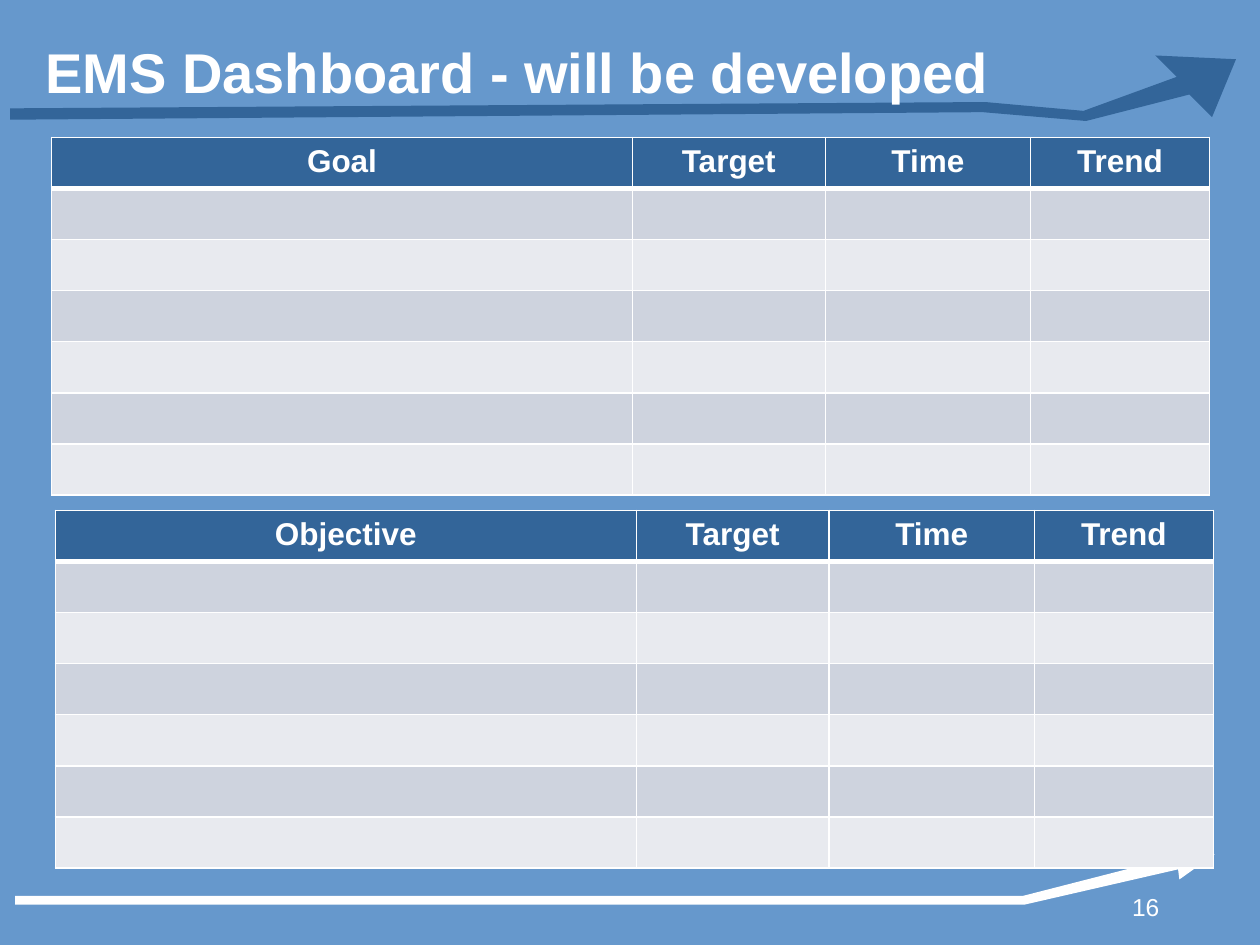
from dataclasses import dataclass

from lxml.etree import SubElement
from pptx import Presentation
from pptx.dml.color import RGBColor as Color
from pptx.enum.text import MSO_ANCHOR as Anchor, PP_ALIGN as Align
from pptx.oxml.ns import qn
from pptx.util import Inches, Pt


@dataclass(frozen=True)
class Theme:
    font: str = "Arial"
    background: str = "6698CC"
    dark: str = "336599"
    white: str = "FFFFFF"
    bands: tuple = ("CED3DE", "E8EAEF")
    title_size: int = 32
    header_size: int = 18
    number_size: int = 14
    thin: int = 1
    thick: int = 3


THEME = Theme()
COLUMN_WIDTHS = (4.61, 1.53, 1.63, 1.42)
MEASURES = ("Target", "Time", "Trend")
ROW_COUNT = 7

# Arrow outlines, in inches on the page
TOP_ARROW = [(0.08, 0.95), (7.8, 0.89), (8.62, 0.96), (9.44, 0.75), (9.62, 0.93), (9.81, 0.47),
             (9.17, 0.44), (9.34, 0.61), (8.6, 0.88), (7.82, 0.81), (0.08, 0.86)]
BOTTOM_ARROW = [(0.12, 7.11), (8.12, 7.11), (9.33, 6.8), (9.31, 6.73), (9.64, 6.78),
                (9.36, 6.98), (9.35, 6.9), (8.13, 7.18), (0.12, 7.18)]


def place(shape, box):
    shape.left, shape.top, shape.width, shape.height = map(Inches, box)


def write(frame, text, size, align, bold=False):
    para = frame.paragraphs[0]
    para.alignment = align
    span = para.add_run()
    span.text = text
    span.font.name = THEME.font
    span.font.size = Pt(size)
    span.font.bold = bold
    span.font.color.rgb = Color.from_string(THEME.white)


def add_arrow(page, points, color):
    start, *rest = [(Inches(x), Inches(y)) for x, y in points]
    builder = page.shapes.build_freeform(*start)
    builder.add_line_segments(rest, close=True)
    arrow = builder.convert_to_shape()
    arrow.shadow.inherit = False
    arrow.fill.solid()
    arrow.fill.fore_color.rgb = Color.from_string(color)
    arrow.line.fill.background()


def add_title(page, box, text):
    title = page.shapes.title
    place(title, box)
    # Bring the title in front of the arrows
    title.element.getparent().append(title.element)
    title.text_frame.word_wrap = True
    title.text_frame.vertical_anchor = Anchor.MIDDLE
    write(title.text_frame, text, THEME.title_size, Align.LEFT, bold=True)


def add_page_number(page, box, text):
    number = page.shapes.add_textbox(*map(Inches, box))
    number.text_frame.word_wrap = True
    write(number.text_frame, text, THEME.number_size, Align.RIGHT)


def set_borders(cell, top, bottom):
    """Draw white cell borders; they must come before the cell's fill."""
    properties = cell._tc.get_or_add_tcPr()
    widths = {"a:lnL": THEME.thin, "a:lnR": THEME.thin, "a:lnT": top, "a:lnB": bottom}
    for tag, width in widths.items():
        line = SubElement(properties, qn(tag), w=str(Pt(width)))
        fill = SubElement(line, qn("a:solidFill"))
        SubElement(fill, qn("a:srgbClr"), val=THEME.white)


def add_dashboard_table(page, box, subject):
    table = page.shapes.add_table(ROW_COUNT, len(COLUMN_WIDTHS), *map(Inches, box)).table
    for column, width in zip(table.columns, COLUMN_WIDTHS):
        column.width = Inches(width)
    for index, row in enumerate(table.rows):
        row.height = Inches(box[3] / ROW_COUNT)
        color = THEME.bands[(index - 1) % 2] if index else THEME.dark
        for cell in row.cells:
            set_borders(cell,
                        top=THEME.thick if index == 1 else THEME.thin,
                        bottom=THEME.thick if index == 0 else THEME.thin)
            cell.fill.solid()
            cell.fill.fore_color.rgb = Color.from_string(color)
    for cell, heading in zip(table.rows[0].cells, (subject, *MEASURES)):
        write(cell.text_frame, heading, THEME.header_size, Align.CENTER, bold=True)


def main():
    deck = Presentation()
    deck.slide_width, deck.slide_height = Inches(10), Inches(7.5)
    page = deck.slides.add_slide(deck.slide_layouts[5])
    page.background.fill.solid()
    page.background.fill.fore_color.rgb = Color.from_string(THEME.background)

    # Decorative arrows
    add_arrow(page, BOTTOM_ARROW, THEME.white)
    add_arrow(page, TOP_ARROW, THEME.dark)

    # Title and page number
    add_title(page, (0.26, 0.25, 9.07, 0.63), "EMS Dashboard - will be developed")
    add_page_number(page, (8.58, 7.03, 0.72, 0.31), "16")

    # Dashboard tables
    add_dashboard_table(page, (0.41, 1.09, 9.19, 2.84), "Goal")
    add_dashboard_table(page, (0.44, 4.05, 9.19, 2.84), "Objective")

    deck.save("out.pptx")


if __name__ == "__main__":
    main()
